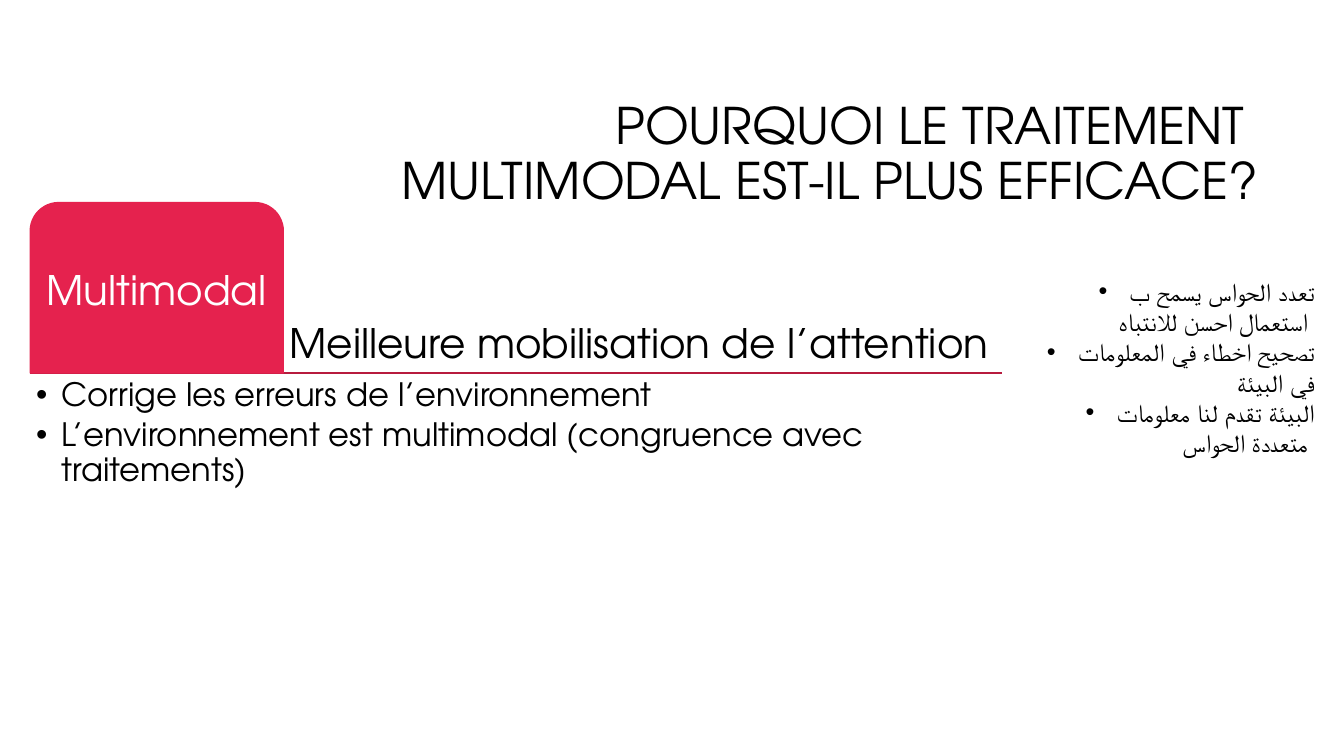
from lxml.etree import SubElement
from pptx import Presentation
from pptx.dml.color import RGBColor
from pptx.enum.shapes import MSO_CONNECTOR, MSO_SHAPE
from pptx.enum.text import MSO_ANCHOR, MSO_AUTO_SIZE, PP_ALIGN
from pptx.oxml.ns import qn
from pptx.util import Emu, Pt

FONT = "TeX Gyre Adventor"
PX_PER_INCH = 100
BLACK, WHITE, PINK, DARK_PINK = "000000", "FFFFFF", "E5224E", "B71B3E"


def px(length):
    """Turn whole pixels into EMU."""
    return Emu(length * 914400 // PX_PER_INCH)


def color(hex_code):
    """Turn a hex string into a colour."""
    return RGBColor.from_string(hex_code)


def add_bullet(para, indent):
    """Give a paragraph a hanging round bullet."""
    properties = para._p.get_or_add_pPr()
    properties.set("marL", str(px(indent)))
    properties.set("indent", str(-px(indent)))
    SubElement(properties, qn("a:buFont"), typeface="Arial")
    SubElement(properties, qn("a:buChar"), char="•")


def write(shape, lines, size, fill=BLACK, align=PP_ALIGN.LEFT, anchor=MSO_ANCHOR.TOP,
          spacing=0.9, after=0, indent=0, inset=None):
    """Write one paragraph per line into a shape."""
    frame = shape.text_frame
    frame.word_wrap = True
    frame.auto_size = MSO_AUTO_SIZE.NONE
    frame.vertical_anchor = anchor
    if inset is not None:
        frame.margin_left = frame.margin_right = px(inset)
        frame.margin_top = frame.margin_bottom = px(inset)
    for number, line in enumerate(lines):
        para = frame.add_paragraph() if number else frame.paragraphs[0]
        para.text = line
        para.alignment = align
        para.line_spacing = spacing
        para.space_before = Pt(0)
        para.space_after = Pt(after)
        if indent:
            add_bullet(para, indent)
        for span in para.runs:
            span.font.name = FONT
            span.font.size = Pt(size)
            span.font.color.rgb = color(fill)
            SubElement(span._r.get_or_add_rPr(), qn("a:cs"), typeface=FONT)


def add_title(page, text, left, top, width, height):
    """Place and write the slide title."""
    title = page.shapes.title
    title.left, title.top, title.width, title.height = map(px, (left, top, width, height))
    write(title, [text], 36, align=PP_ALIGN.RIGHT, anchor=MSO_ANCHOR.MIDDLE)


def add_text(page, lines, left, top, width, height, size, **style):
    """Add a text box."""
    box = page.shapes.add_textbox(*map(px, (left, top, width, height)))
    write(box, lines, size, **style)


def add_tab(page, label, left, top, width, height):
    """Add a label tab with rounded upper corners."""
    tab = page.shapes.add_shape(MSO_SHAPE.ROUND_2_SAME_RECTANGLE,
                                *map(px, (left, top, width, height)))
    tab.shadow.inherit = False
    tab.fill.solid()
    tab.fill.fore_color.rgb = color(PINK)
    tab.line.color.rgb = color(PINK)
    tab.line.width = Pt(1)
    write(tab, [label], 29, fill=WHITE, align=PP_ALIGN.CENTER,
          anchor=MSO_ANCHOR.MIDDLE, inset=6)


def add_rule(page, left, right, top):
    """Add a thin horizontal line."""
    rule = page.shapes.add_connector(MSO_CONNECTOR.STRAIGHT,
                                     *map(px, (left, top, right, top)))
    rule.line.color.rgb = color(DARK_PINK)
    rule.line.width = Pt(1)
    SubElement(rule._element.spPr, qn("a:effectLst"))


def main():
    """Build the slide."""
    deck = Presentation()
    deck.slide_width, deck.slide_height = px(1333), px(750)
    page = deck.slides.add_slide(deck.slide_layouts[5])
    left, tab_top, rule_top, right = 30, 201, 370, 994
    tab_width, tab_height = 251, rule_top - tab_top

    add_title(page, "POURQUOI LE TRAITEMENT \vMULTIMODAL EST-IL PLUS EFFICACE?",
              316, 84, 942, 141)
    add_rule(page, left, right, rule_top)
    add_text(page, ["Meilleure mobilisation de l’attention"], left + tab_width, tab_top,
             right - left - tab_width, tab_height, 29, anchor=MSO_ANCHOR.BOTTOM, inset=6)
    add_tab(page, "Multimodal", left, tab_top, tab_width, tab_height)
    add_text(page, ["Corrige les erreurs de l’environnement",
                    "L’environnement est multimodal (congruence avec traitements)"],
             left, rule_top, right - left, 340, 23, after=3.5, indent=25, inset=6)
    add_text(page, ["تعدد الحواس يسمح ب استعمال احسن للانتباه ",
                    "تصحيح اخطاء في المعلومات في البيئة",
                    "البيئة تقدم لنا معلومات متعددة الحواس "],
             1006, 269, 308, 340, 18, align=PP_ALIGN.RIGHT, spacing=1.0, indent=31)
    deck.save("out.pptx")


if __name__ == "__main__":
    main()
